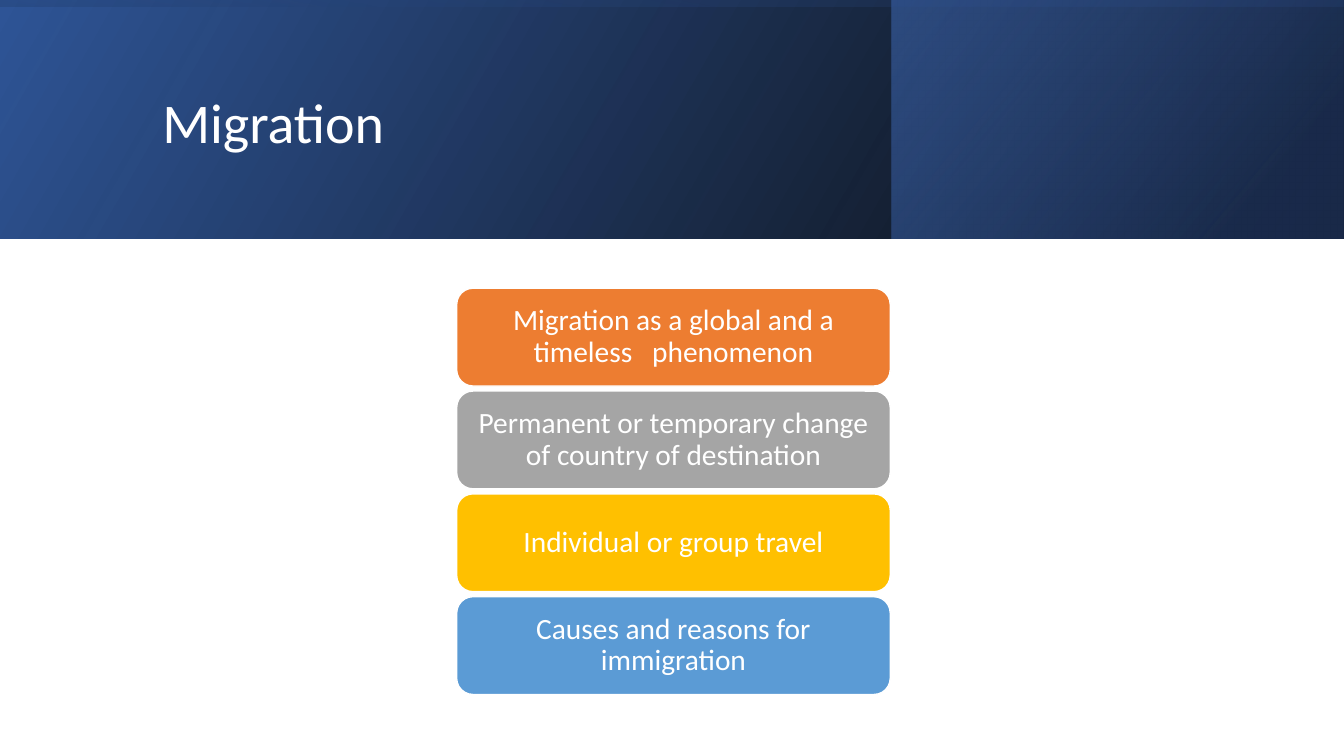
import lxml.etree
import pptx
import pptx.dml.color
import pptx.enum.shapes
import pptx.enum.text
import pptx.oxml.ns
import pptx.util

Inches = pptx.util.Inches
SHAPES = pptx.enum.shapes.MSO_SHAPE
ALIGN = pptx.enum.text.PP_ALIGN
COLORS = {
    "black": "000000", "blue": "2F5597", "navy": "203864", "azure": "4472C4",
    "orange": "ED7D31", "gray": "A5A5A5", "gold": "FFC000", "sky": "5B9BD5",
    "white": "FFFFFF",
}


def color(name):
    return pptx.dml.color.RGBColor.from_string(COLORS[name])


def write(shape, text, size, align, **insets):
    """Fill a shape with one white, vertically centred paragraph."""
    frame = shape.text_frame
    frame.text = text
    para = frame.paragraphs[0]
    formats = [
        (frame, {"word_wrap": True,
                 "auto_size": pptx.enum.text.MSO_AUTO_SIZE.NONE,
                 "vertical_anchor": pptx.enum.text.MSO_ANCHOR.MIDDLE, **insets}),
        (para, {"alignment": align, "line_spacing": 0.9}),
        (para.runs[0].font, {"size": pptx.util.Pt(size), "name": "Calibri"}),
    ]
    for target, values in formats:
        for key, value in values.items():
            setattr(target, key, value)
    para.runs[0].font.color.rgb = color("white")


deck = pptx.Presentation()
deck.slide_width = Inches(13.33)
deck.slide_height = Inches(7.5)
slide = deck.slides.add_slide(deck.slide_layouts[5])

# Header bands: box, rotation, gradient angle, stops (position, color, opacity %)
bands = [
    ((0, 0, 13.33, 2.37), 0, 30, [(0, "black", 96), (1, "blue", 100)]),
    ((8.84, 0, 4.48, 2.37), 0, 40, [(0.19, "navy", 68), (1, "azure", 48)]),
    ((5.48, -5.48, 2.37, 13.33), 270, 10, [(0.23, "blue", 16), (0.99, "black", 45)]),
]
for box, turn, angle, stops in bands:
    band = slide.shapes.add_shape(SHAPES.RECTANGLE, *map(Inches, box))
    band.shadow.inherit = False
    band.line.fill.background()
    band.rotation = turn
    band.element.spPr.xfrm.set("flipH", "1")
    band.fill.gradient()
    band.fill.gradient_angle = angle
    for stop, (place, name, _) in zip(band.fill.gradient_stops, stops):
        stop.position = place
        stop.color.rgb = color(name)
    for node, (_, _, alpha) in zip(band.element.xpath(".//a:gs/a:srgbClr"), stops):
        tag = pptx.oxml.ns.qn("a:alpha")
        lxml.etree.SubElement(node, tag).set("val", str(alpha * 1000))

title = slide.shapes.title
title.left, title.top, title.width, title.height = map(Inches, (1.51, 0.38, 10.63, 1.72))
write(title, "Migration", 40, ALIGN.LEFT)
slide.shapes.element.append(title.element)  # bring in front of the bands

topics = [
    ("Migration as a global and a timeless   phenomenon", "orange"),
    ("Permanent or temporary change of country of destination", "gray"),
    ("Individual or group travel", "gold"),
    ("Causes and reasons for immigration", "sky"),
]
insets = {
    "margin_left": Inches(0.14), "margin_right": Inches(0.14),
    "margin_top": Inches(0.09), "margin_bottom": Inches(0.09),
}
for row, (text, name) in enumerate(topics):
    card = slide.shapes.add_shape(
        SHAPES.ROUNDED_RECTANGLE,
        Inches(4.53), Inches(2.86 + row * 1.02), Inches(4.3), Inches(0.97))
    card.shadow.inherit = False
    card.fill.solid()
    card.fill.fore_color.rgb = color(name)
    card.line.color.rgb = color("white")
    card.line.width = pptx.util.Pt(1)
    write(card, text, 21, ALIGN.CENTER, **insets)

deck.save("out.pptx")
